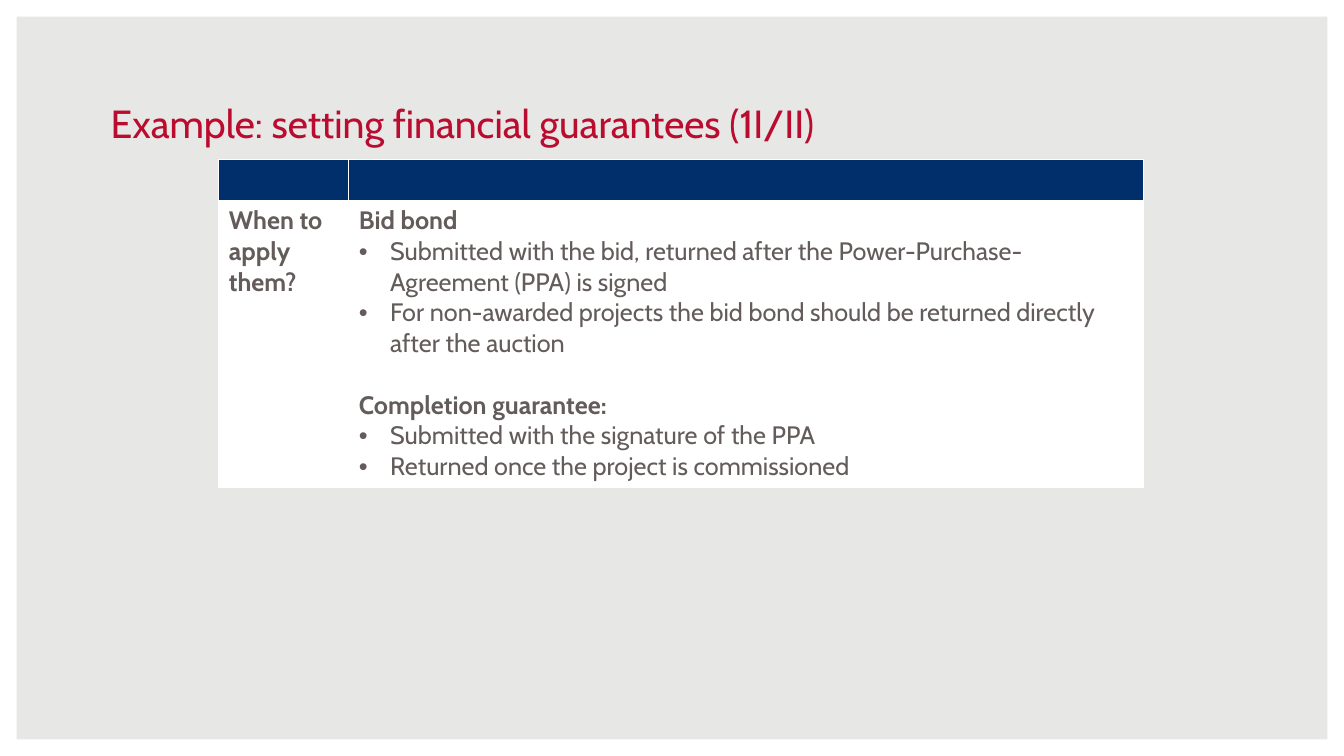
import lxml.etree
import pptx
import pptx.dml.color
import pptx.enum.shapes
import pptx.enum.text
import pptx.oxml.ns
import pptx.util

Inches = pptx.util.Inches
Pt = pptx.util.Pt
RGBColor = pptx.dml.color.RGBColor

GREY_BACKGROUND = RGBColor(0xE7, 0xE7, 0xE5)
WHITE = RGBColor(0xFF, 0xFF, 0xFF)
NAVY = RGBColor(0x00, 0x2F, 0x6C)
RED = RGBColor(0xBA, 0x0C, 0x2F)
TEXT_GREY = RGBColor(0x63, 0x5C, 0x5B)

TITLE_FONT = {"name": "Cabin", "size": Pt(28)}
BODY_FONT = {"name": "Cabin", "size": Pt(18)}
BULLET_INDENT = Inches(0.31)
GROUP_GAP = Pt(22)

QUESTION = "When to apply them?"
GUARANTEES = {
    "Bid bond": [
        "Submitted with the bid, returned after the Power-Purchase-Agreement (PPA) is signed",
        "For non-awarded projects the bid bond should be returned directly after the auction",
    ],
    "Completion guarantee:": [
        "Submitted with the signature of the PPA",
        "Returned once the project is commissioned",
    ],
}


def write_run(paragraph, text, style, color, bold=False):
    run = paragraph.add_run()
    run.text = text
    for attribute, value in {**style, "bold": bold}.items():
        setattr(run.font, attribute, value)
    run.font.color.rgb = color


def add_element(parent, tag, **attributes):
    return lxml.etree.SubElement(parent, pptx.oxml.ns.qn(tag), attributes)


def add_bullet(paragraph):
    properties = paragraph._p.get_or_add_pPr()
    properties.set("marL", str(BULLET_INDENT))
    properties.set("indent", str(-BULLET_INDENT))
    add_element(properties, "a:buFont", typeface="Arial")
    add_element(properties, "a:buChar", char="•")


def paint_cell(cell, color):
    """Give the cell thin white borders and a plain fill."""
    properties = cell._tc.get_or_add_tcPr()
    for side in ("a:lnL", "a:lnR", "a:lnT", "a:lnB"):
        border = add_element(properties, side, w=str(Pt(1)))
        fill = add_element(border, "a:solidFill")
        add_element(fill, "a:srgbClr", val=str(WHITE))
    cell.fill.solid()
    cell.fill.fore_color.rgb = color


def add_frame(slide, left, top, width, height):
    frame = slide.shapes.add_shape(
        pptx.enum.shapes.MSO_SHAPE.FRAME, left, top, width, height)
    frame.adjustments[0] = 0.022
    frame.shadow.inherit = False
    frame.fill.solid()
    frame.fill.fore_color.rgb = WHITE
    frame.line.fill.background()


def add_title(slide, left, top, width, height):
    title = slide.shapes.add_textbox(left, top, width, height).text_frame
    title.word_wrap = True
    title.vertical_anchor = pptx.enum.text.MSO_ANCHOR.BOTTOM
    write_run(title.paragraphs[0], "Example: setting financial guarantees (1I/II)",
              TITLE_FONT, RED)


def write_guarantees(text_frame):
    for index, (guarantee, rules) in enumerate(GUARANTEES.items()):
        heading = text_frame.add_paragraph() if index else text_frame.paragraphs[0]
        if index:
            heading.space_before = GROUP_GAP
        write_run(heading, guarantee, BODY_FONT, TEXT_GREY, bold=True)
        for rule in rules:
            item = text_frame.add_paragraph()
            add_bullet(item)
            write_run(item, rule, BODY_FONT, TEXT_GREY)


def add_guarantee_table(slide, left, top, width, height):
    table = slide.shapes.add_table(2, 2, left, top, width, height).table
    question_width = Inches(1.29)
    header_height = Inches(0.38)
    table.columns[0].width = question_width
    table.columns[1].width = width - question_width
    table.rows[0].height = header_height
    table.rows[1].height = height - header_height
    for row, color in enumerate((NAVY, WHITE)):
        for column in range(2):
            paint_cell(table.cell(row, column), color)
    write_run(table.cell(1, 0).text_frame.paragraphs[0], QUESTION,
              BODY_FONT, TEXT_GREY, bold=True)
    write_guarantees(table.cell(1, 1).text_frame)


def main():
    presentation = pptx.Presentation()
    presentation.slide_width = Inches(13.33)
    presentation.slide_height = Inches(7.5)
    slide = presentation.slides.add_slide(presentation.slide_layouts[6])
    slide.background.fill.solid()
    slide.background.fill.fore_color.rgb = GREY_BACKGROUND
    add_frame(slide, 0, 0, presentation.slide_width, presentation.slide_height)
    add_guarantee_table(slide, Inches(2.17), Inches(1.58), Inches(9.17), Inches(3.2))
    add_title(slide, Inches(1), Inches(0.93), Inches(11.33), Inches(0.57))
    presentation.save("out.pptx")


if __name__ == "__main__":
    main()
